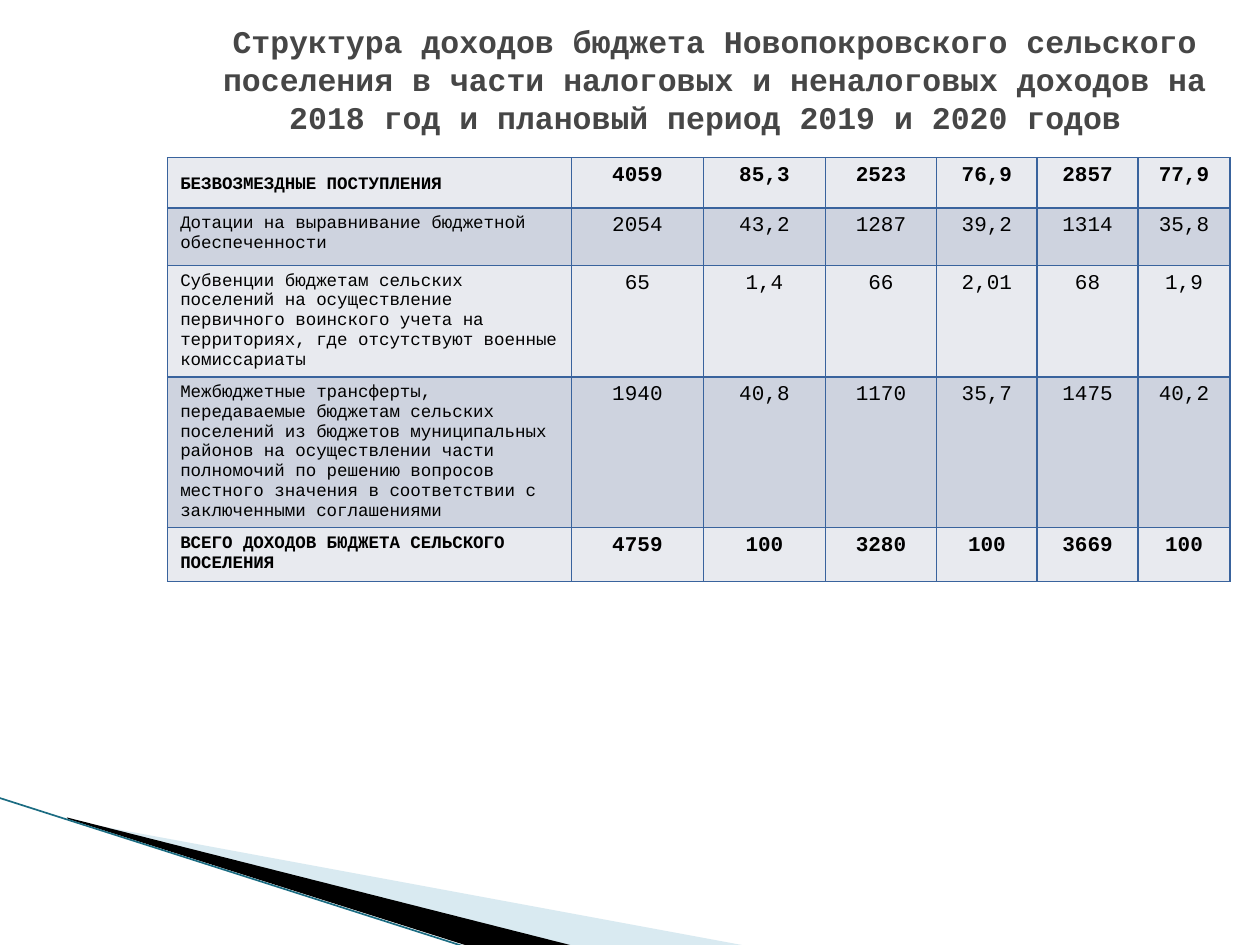
from typing import NamedTuple

import pptx
import pptx.dml.color
import pptx.enum.text
import pptx.oxml
import pptx.oxml.ns
import pptx.util
from lxml import etree

Cm = pptx.util.Cm
Pt = pptx.util.Pt
RGBColor = pptx.dml.color.RGBColor
ALIGN = pptx.enum.text.PP_ALIGN
ANCHOR = pptx.enum.text.MSO_ANCHOR
qn = pptx.oxml.ns.qn

FONT = "Courier New"
BLACK = RGBColor(0x00, 0x00, 0x00)
GRAY = RGBColor(0x46, 0x46, 0x46)
LIGHT = RGBColor(0xE8, 0xEA, 0xEF)
DARK = RGBColor(0xCE, 0xD3, 0xDF)
EDGE = RGBColor(0x39, 0x63, 0x9D)
PALE = RGBColor(0xA0, 0xCB, 0xDC)
TEAL = RGBColor(0x1B, 0x6C, 0x82)


class Row(NamedTuple):
    label: str
    values: str
    height: float
    bold: bool = False


class Wedge(NamedTuple):
    frame: tuple[float, float, float, float]
    points: list[tuple[float, float]]
    color: RGBColor
    alpha: int


TITLE = (
    "Структура доходов бюджета Новопокровского сельского поселения в части "
    "налоговых и неналоговых доходов на 2018 год и плановый период 2019 и 2020 годов "
)
COLS = [8.14, 2.66, 2.46, 2.24, 2.03, 2.03, 1.86]
ROWS = [
    Row("БЕЗВОЗМЕЗДНЫЕ ПОСТУПЛЕНИЯ", "4059 85,3 2523 76,9 2857 77,9", 1.01, True),
    Row("Дотации на выравнивание бюджетной обеспеченности",
        "2054 43,2 1287 39,2 1314 35,8", 1.16),
    Row("Субвенции бюджетам сельских поселений на осуществление первичного "
        "воинского учета на территориях, где отсутствуют военные комиссариаты",
        "65 1,4 66 2,01 68 1,9", 1.93),
    Row("Межбюджетные трансферты, передаваемые бюджетам сельских поселений из "
        "бюджетов муниципальных районов на осуществлении части полномочий по "
        "решению вопросов местного значения в соответствии с заключенными "
        "соглашениями", "1940 40,8 1170 35,7 1475 40,2", 2.74),
    Row("ВСЕГО ДОХОДОВ БЮДЖЕТА СЕЛЬСКОГО ПОСЕЛЕНИЯ",
        "4759 100 3280 100 3669 100", 1.09, True),
]
WEDGES = [
    Wedge((1.98, 13.89, 10.57, 4.01),
          [(1.4, 16.54), (15.11, 19.08), (11.58, 19.08), (1.4, 16.51)], PALE, 40),
    Wedge((-0.15, 16.08, 10.57, 2.34),
          [(1.35, 16.48), (11.61, 19.08), (9.53, 19.1), (1.37, 16.51)], BLACK, 100),
]


def write(frame, text: str, *, size: float, color: RGBColor = BLACK,
          bold: bool = False, align=ALIGN.LEFT) -> None:
    par = frame.paragraphs[0]
    par.alignment = align
    run = par.add_run()
    run.text = text
    run.font.name = FONT
    run.font.size = Pt(size)
    run.font.bold = bold
    run.font.color.rgb = color


def set_frame(shape, frame: tuple[float, float, float, float]) -> None:
    """Give the shape a new frame while its outline stays in place."""
    left, top, width, height = map(Cm, frame)
    for spot in shape._element.iter(qn("a:pt")):
        spot.set("x", str(int(spot.get("x")) + shape.left - left))
        spot.set("y", str(int(spot.get("y")) + shape.top - top))
    outline = shape._element.find(".//" + qn("a:path"))
    outline.set("w", str(width))
    outline.set("h", str(height))
    shape.left, shape.top, shape.width, shape.height = left, top, width, height


def draw_wedge(shapes, wedge: Wedge) -> None:
    first, *rest = [(Cm(x), Cm(y)) for x, y in wedge.points]
    pen = shapes.build_freeform(*first)
    pen.add_line_segments(rest)
    shape = pen.convert_to_shape()
    set_frame(shape, wedge.frame)
    shape.shadow.inherit = False
    shape.line.fill.background()
    shape.fill.solid()
    shape.fill.fore_color.rgb = wedge.color
    if wedge.alpha < 100:
        tone = shape.fill._xPr.find(".//" + qn("a:srgbClr"))
        etree.SubElement(tone, qn("a:alpha"), val=str(wedge.alpha * 1000))


def draw_line(shapes) -> None:
    line = shapes.add_connector(1, Cm(-0.03), Cm(16.08), Cm(9.42), Cm(19.1))
    line.line.color.rgb = TEAL
    line.line.width = Pt(0.95)
    etree.SubElement(line._element.spPr, qn("a:effectLst"))


def style_cell(cell, fill: RGBColor) -> None:
    """Set the borders first, as they precede the fill in the cell's XML."""
    props = cell._tc.get_or_add_tcPr()
    for side in ("lnL", "lnR", "lnT", "lnB"):
        edge = etree.SubElement(props, qn(f"a:{side}"), w=str(Pt(1)))
        paint = etree.SubElement(edge, qn("a:solidFill"))
        etree.SubElement(paint, qn("a:srgbClr"), val=str(EDGE))
    cell.fill.solid()
    cell.fill.fore_color.rgb = fill


def draw_table(shapes) -> None:
    table = shapes.add_table(len(ROWS), len(COLS), Cm(3.38), Cm(3.18),
                             Cm(sum(COLS)), Cm(sum(r.height for r in ROWS))).table
    table.first_row = table.horz_banding = False
    for col, width in zip(table.columns, COLS):
        col.width = Cm(width)
    for i, row in enumerate(ROWS):
        table.rows[i].height = Cm(row.height)
        for j, text in enumerate([row.label, *row.values.split()]):
            cell = table.cell(i, j)
            style_cell(cell, DARK if i % 2 else LIGHT)
            write(cell.text_frame, text, size=12 if j else 10, bold=row.bold,
                  align=ALIGN.CENTER if j else ALIGN.LEFT)
    head = table.cell(0, 0)
    head.vertical_anchor = ANCHOR.MIDDLE
    head.margin_top = Cm(0.23)


def draw_title(shapes) -> None:
    box = shapes.add_textbox(Cm(3.99), Cm(0), Cm(20.83), Cm(3.18))
    frame = box.text_frame
    frame.word_wrap = True
    frame.vertical_anchor = ANCHOR.MIDDLE
    write(frame, TITLE, size=18, color=GRAY, bold=True, align=ALIGN.CENTER)


def main() -> None:
    deck = pptx.Presentation()
    deck.slide_width, deck.slide_height = Cm(25.4), Cm(19.05)
    shapes = deck.slides.add_slide(deck.slide_layouts[6]).shapes
    for wedge in WEDGES:
        draw_wedge(shapes, wedge)
    draw_line(shapes)
    draw_table(shapes)
    draw_title(shapes)
    deck.save("out.pptx")


if __name__ == "__main__":
    main()
